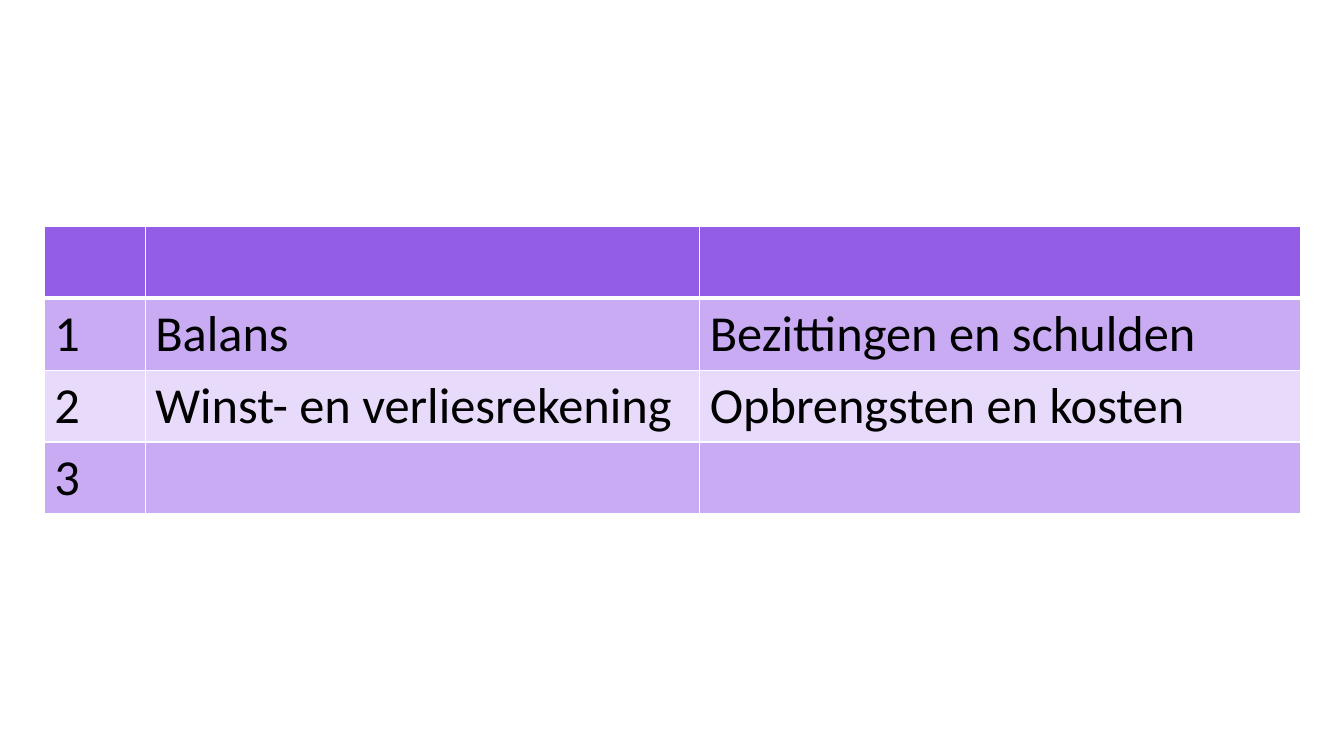
from dataclasses import dataclass

from lxml.etree import SubElement
from pptx import Presentation
from pptx.dml.color import RGBColor as RGB
from pptx.oxml.ns import qn
from pptx.slide import Slide
from pptx.table import _Cell as Cell
from pptx.util import Inches, Pt


@dataclass(frozen=True)
class Theme:
    font: str = "Calibri"
    size: int = 36
    text: str = "000000"
    header: str = "945DE8"
    odd: str = "C8ABF3"
    even: str = "E7DAFA"
    border: str = "FFFFFF"
    thin: int = 1
    thick: int = 3


@dataclass(frozen=True)
class Row:
    texts: tuple[str, str, str]
    fill: str
    top: int = 1
    bottom: int = 1


THEME = Theme()
COLUMN_WIDTHS = (1, 5.5, 5.96)
ROW_HEIGHT = 0.71
ROWS = (
    Row(("", "", ""), THEME.header, bottom=THEME.thick),
    Row(("1", "Balans", "Bezittingen en schulden"), THEME.odd, top=THEME.thick),
    Row(("2", "Winst- en verliesrekening", "Opbrengsten en kosten"), THEME.even),
    Row(("3", "", ""), THEME.odd),
)


def add_border(cell: Cell, side: str, width: int) -> None:
    ln = SubElement(cell._tc.get_or_add_tcPr(), qn(f"a:ln{side}"), w=str(Pt(width)))
    fill = SubElement(ln, qn("a:solidFill"))
    SubElement(fill, qn("a:srgbClr"), val=THEME.border)


def fill_cell(cell: Cell, text: str, row: Row) -> None:
    widths = {"L": THEME.thin, "R": THEME.thin, "T": row.top, "B": row.bottom}
    for side, width in widths.items():
        add_border(cell, side, width)
    cell.fill.solid()
    cell.fill.fore_color.rgb = RGB.from_string(row.fill)
    if text:
        cell.text = text
        font = cell.text_frame.paragraphs[0].font
        font.name = THEME.font
        font.size = Pt(THEME.size)
        font.bold = False
        font.color.rgb = RGB.from_string(THEME.text)


def add_statements_table(s: Slide) -> None:
    table = s.shapes.add_table(
        len(ROWS), len(COLUMN_WIDTHS), Inches(0.44), Inches(2.25),
        Inches(sum(COLUMN_WIDTHS)), Inches(ROW_HEIGHT * len(ROWS)),
    ).table
    for column, width in zip(table.columns, COLUMN_WIDTHS):
        column.width = Inches(width)
    for i, row in enumerate(ROWS):
        table.rows[i].height = Inches(ROW_HEIGHT)
        for j, text in enumerate(row.texts):
            fill_cell(table.cell(i, j), text, row)


def main() -> None:
    prs = Presentation()
    prs.slide_width, prs.slide_height = Inches(13.33), Inches(7.5)
    s = prs.slides.add_slide(prs.slide_layouts[6])
    add_statements_table(s)
    prs.save("out.pptx")


if __name__ == "__main__":
    main()
